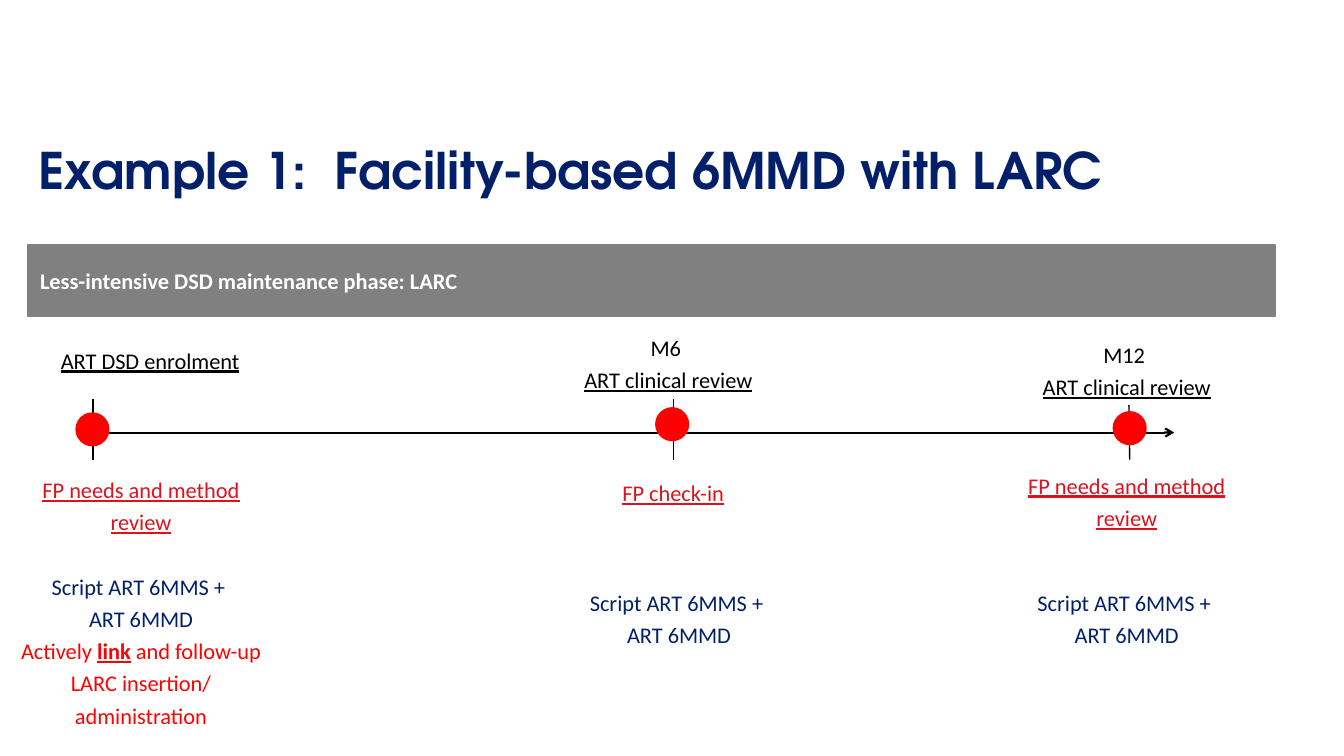
from pptx import Presentation, util as u
from pptx.dml.color import RGBColor
from pptx.enum import shapes, text
from pptx.oxml.ns import qn
from lxml import etree

NAVY, RED, CRIMSON = "022069", "FF0000", "DC131F"
BLACK, WHITE, GREY = "000000", "FFFFFF", "808080"


def color(value):
    return RGBColor.from_string(value)


class SlideBuilder:
    font = "Calibri"
    size = 16

    def __init__(self, slide):
        self.slide = slide

    def add_runs(self, paragraph, runs, size=None, font=None):
        """Each run is (words, colour, styles); styles holds b and/or u."""
        for words, hue, styles in runs:
            run = paragraph.add_run()
            run.text = words
            run.font.name = font or self.font
            run.font.size = u.Pt(size or self.size)
            run.font.color.rgb = color(hue)
            run.font.bold = "b" in styles
            run.font.underline = "u" in styles

    def label(self, left, top, width, height, paragraphs, gap_before=None):
        """Centred text; gap_before is the index of a paragraph set one line lower."""
        shape = self.slide.shapes.add_textbox(u.Cm(left), u.Cm(top), u.Cm(width), u.Cm(height))
        frame = shape.text_frame
        frame.word_wrap = True
        for index, runs in enumerate(paragraphs):
            paragraph = frame.paragraphs[0] if index == 0 else frame.add_paragraph()
            paragraph.alignment = text.PP_ALIGN.CENTER
            paragraph.line_spacing = 1.2
            if index == gap_before:
                paragraph.space_before = u.Pt(23)
            self.add_runs(paragraph, runs)

    def title(self, left, top, width, height, words):
        shape = self.slide.shapes.add_textbox(u.Cm(left), u.Cm(top), u.Cm(width), u.Cm(height))
        frame = shape.text_frame
        frame.word_wrap = True
        frame.vertical_anchor = text.MSO_ANCHOR.MIDDLE
        self.add_runs(frame.paragraphs[0], [(words, NAVY, "b")], 36, "TeX Gyre Adventor")

    def shape(self, kind, left, top, width, height, fill):
        shape = self.slide.shapes.add_shape(kind, u.Cm(left), u.Cm(top), u.Cm(width), u.Cm(height))
        shape.shadow.inherit = False
        shape.fill.solid()
        shape.fill.fore_color.rgb = color(fill)
        shape.line.fill.background()
        return shape

    def banner(self, left, top, width, height, words):
        bar = self.shape(shapes.MSO_SHAPE.RECTANGLE, left, top, width, height, GREY)
        bar.line.color.rgb = color(GREY)
        bar.line.width = u.Pt(1)
        frame = bar.text_frame
        frame.word_wrap = True
        frame.vertical_anchor = text.MSO_ANCHOR.MIDDLE
        frame.margin_left = frame.margin_right = u.Cm(0.3)
        frame.paragraphs[0].alignment = text.PP_ALIGN.LEFT
        self.add_runs(frame.paragraphs[0], [(words, WHITE, "b")])

    def line(self, x1, y1, x2, y2, width=1, arrow=False):
        connector = self.slide.shapes.add_connector(
            shapes.MSO_CONNECTOR.STRAIGHT, u.Cm(x1), u.Cm(y1), u.Cm(x2), u.Cm(y2))
        connector.line.color.rgb = color(BLACK)
        connector.line.width = u.Pt(width)
        properties = connector._element.spPr
        if arrow:
            etree.SubElement(properties.find(qn("a:ln")), qn("a:tailEnd"), type="arrow")
        etree.SubElement(properties, qn("a:effectLst"))


def main():
    presentation = Presentation()
    presentation.slide_width, presentation.slide_height = u.Cm(33.87), u.Cm(19.05)
    builder = SlideBuilder(presentation.slides.add_slide(presentation.slide_layouts[6]))

    # Heading
    builder.title(0.71, 2.67, 28.7, 3.18, "Example 1:  Facility-based 6MMD with LARC")
    builder.banner(0.71, 6.17, 31.42, 1.8, "Less-intensive DSD maintenance phase: LARC")

    # Timeline: tick (x1, top, x2), then dot (left, top)
    builder.line(2.34, 10.9, 29.59, 10.9, 1.5, arrow=True)
    milestones = [((2.34, 10.06, 2.34), (1.9, 10.39)),
                  ((16.97, 10.06, 16.97), (16.51, 10.26)),
                  ((28.45, 10.21, 28.47), (28.04, 10.36))]
    for (x1, top, x2), dot in milestones:
        builder.line(x1, top, x2, 11.58)
        builder.shape(shapes.MSO_SHAPE.OVAL, *dot, 0.86, 0.86, RED)

    # Visits above the timeline
    clinical_review = [("ART clinical review", BLACK, "u")]
    builder.label(0.71, 8.48, 6.15, 1.02, [[("ART DSD enrolment", BLACK, "u")]])
    builder.label(13.39, 8.15, 6.91, 1.85, [[("M6 ", BLACK, "")], clinical_review])
    builder.label(24.94, 8.33, 6.91, 1.85, [[("M12 ", BLACK, "")], clinical_review])

    # Family planning and scripts below the timeline
    needs_review = [("FP needs and method review", CRIMSON, "u")]
    script = [[("Script ART 6MMS + ", NAVY, "")], [("ART 6MMD", NAVY, "")]]
    link = [("Actively ", RED, ""), ("link", RED, "bu"),
            (" and follow-up LARC insertion/ administration", RED, "")]
    builder.label(0.28, 11.74, 6.55, 7, [needs_review, *script, link], gap_before=1)
    builder.label(13.51, 11.81, 6.91, 1.02, [[("FP check-in", CRIMSON, "u")]])
    builder.label(24.94, 11.63, 6.91, 1.85, [needs_review])
    for left in (13.84, 25.12):
        builder.label(left, 14.58, 6.55, 1.85, script)

    presentation.save("out.pptx")


if __name__ == "__main__":
    main()
